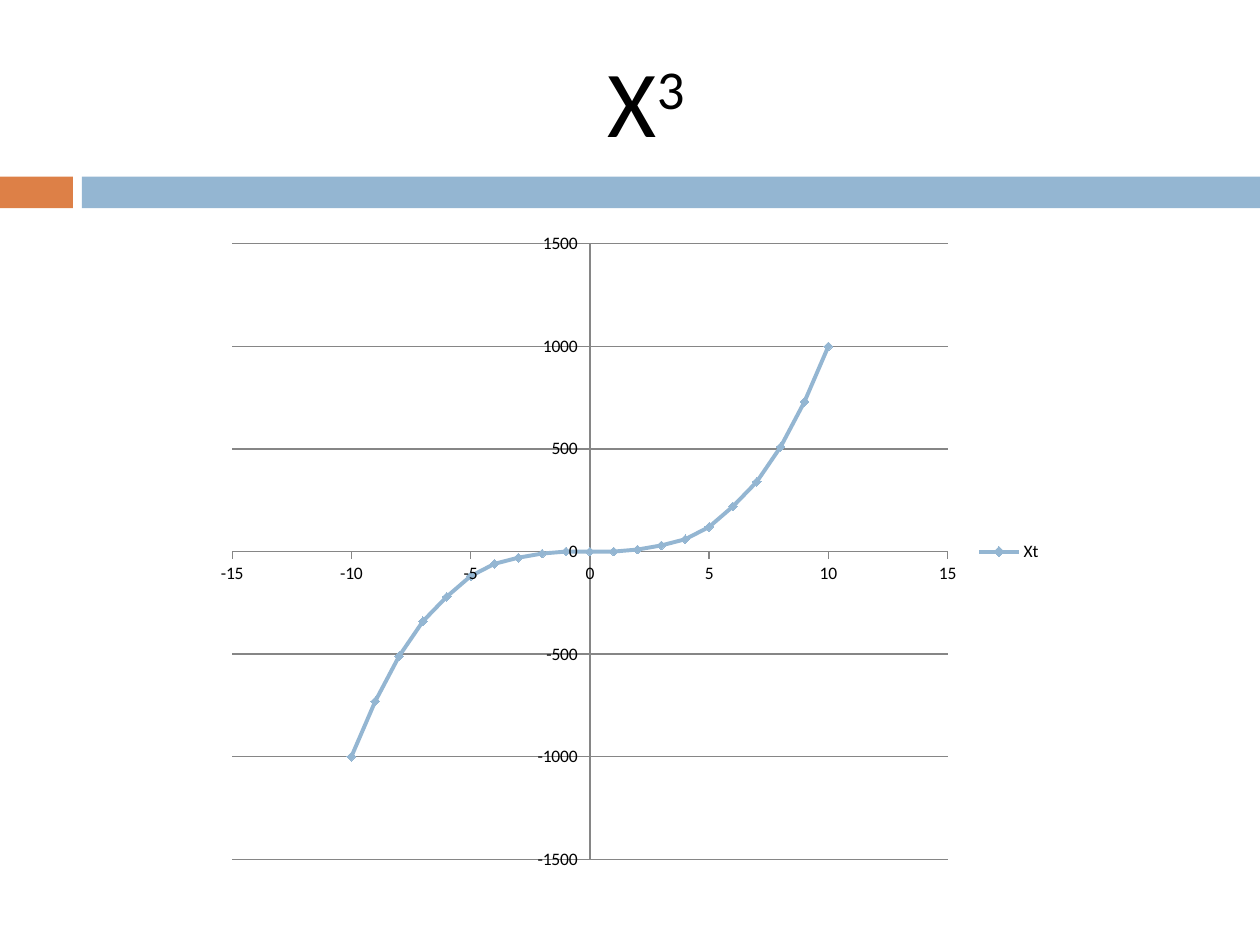
"""Build a slide with a smooth scatter chart of the cubic function."""
from dataclasses import dataclass

from pptx import Presentation
from pptx.chart.axis import ValueAxis
from pptx.chart.data import XyChartData
from pptx.dml.color import RGBColor
from pptx.enum.chart import XL_CHART_TYPE, XL_LEGEND_POSITION, XL_MARKER_STYLE, XL_TICK_MARK
from pptx.enum.shapes import MSO_SHAPE
from pptx.enum.text import MSO_ANCHOR, MSO_AUTO_SIZE, PP_ALIGN
from pptx.util import Cm, Pt

RECT = MSO_SHAPE.RECTANGLE
SCATTER = XL_CHART_TYPE.XY_SCATTER_SMOOTH
DIAMOND = XL_MARKER_STYLE.DIAMOND
RIGHT = XL_LEGEND_POSITION.RIGHT
OUTSIDE, NO_TICK = XL_TICK_MARK.OUTSIDE, XL_TICK_MARK.NONE
MIDDLE, CENTER, NO_FIT = MSO_ANCHOR.MIDDLE, PP_ALIGN.CENTER, MSO_AUTO_SIZE.NONE

FONT = "Calibri"
BLACK, GRAY, BLUE, ORANGE = "000000", "868686", "94B6D2", "DD8047"


@dataclass
class Bar:
    """Horizontal band of the divider below the title."""
    left: float
    width: float
    color: str


BARS = [Bar(0, 1.47, ORANGE), Bar(1.65, 23.75, BLUE)]


def rgb(color: str) -> RGBColor:
    """Turn a hex string into a colour."""
    return RGBColor.from_string(color)


def set_font(font, size: float) -> None:
    """Apply the slide's typeface in black."""
    font.name = FONT
    font.size = Pt(size)
    font.color.rgb = rgb(BLACK)


def set_line(line, color: str, width: float) -> None:
    """Give a line its colour and width."""
    line.color.rgb = rgb(color)
    line.width = Pt(width)


def add_bar(slide, bar: Bar) -> None:
    """Draw one band of the divider."""
    sp = slide.shapes.add_shape(RECT, Cm(bar.left), Cm(3.56), Cm(bar.width), Cm(0.64))
    sp.shadow.inherit = False
    sp.fill.solid()
    sp.fill.fore_color.rgb = rgb(bar.color)
    sp.line.fill.background()


def add_title(slide) -> None:
    """Fill and place the title with its raised exponent."""
    sp = slide.shapes.title
    sp.left, sp.top, sp.width, sp.height = Cm(1.7), Cm(0.64), Cm(22.66), Cm(2.74)
    tf = sp.text_frame
    tf.word_wrap = True
    tf.auto_size = NO_FIT
    tf.vertical_anchor = MIDDLE
    p = tf.paragraphs[0]
    p.alignment = CENTER
    for text in "X3":
        r = p.add_run()
        r.text = text
        set_font(r.font, 54)
    r.font._element.set("baseline", "30000")


def format_axis(axis: ValueAxis, limit: int, step: int, grid: bool) -> None:
    """Scale an axis symmetrically around zero and style it."""
    axis.minimum_scale, axis.maximum_scale = -limit, limit
    axis.major_unit = step
    axis.major_tick_mark = OUTSIDE
    axis.minor_tick_mark = NO_TICK
    axis.has_major_gridlines = grid
    if grid:
        set_line(axis.major_gridlines.format.line, GRAY, 0.75)
    set_line(axis.format.line, GRAY, 0.75)
    set_font(axis.tick_labels.font, 10)


def add_cubic_chart(slide) -> None:
    """Plot the cubes of -10 to 10, rounded to tens."""
    data = XyChartData(number_format="General")
    series = data.add_series("Xt")
    for x in range(-10, 11):
        series.add_data_point(x, round(x ** 3, -1))
    chart = slide.shapes.add_chart(
        SCATTER, Cm(4.11), Cm(4.45), Cm(17.15), Cm(13.34), data
    ).chart
    set_font(chart.font, 10)
    chart.has_title = False
    chart.has_legend = True
    chart.legend.position = RIGHT
    chart.legend.include_in_layout = False
    set_font(chart.legend.font, 10)
    format_axis(chart.category_axis, 15, 5, False)
    format_axis(chart.value_axis, 1500, 500, True)
    plot = chart.plots[0]
    plot.vary_by_categories = False
    curve = plot.series[0]
    curve.smooth = True
    set_line(curve.format.line, BLUE, 2.25)
    marker = curve.marker
    marker.style = DIAMOND
    marker.size = 5
    marker.format.fill.solid()
    marker.format.fill.fore_color.rgb = rgb(BLUE)
    set_line(marker.format.line, BLUE, 0.75)


def main() -> None:
    """Assemble and save the slide."""
    prs = Presentation()
    prs.slide_width, prs.slide_height = Cm(25.4), Cm(19.05)
    s = prs.slides.add_slide(prs.slide_layouts.get_by_name("Title Only"))
    for bar in BARS:
        add_bar(s, bar)
    add_title(s)
    add_cubic_chart(s)
    prs.save("out.pptx")


if __name__ == "__main__":
    main()
